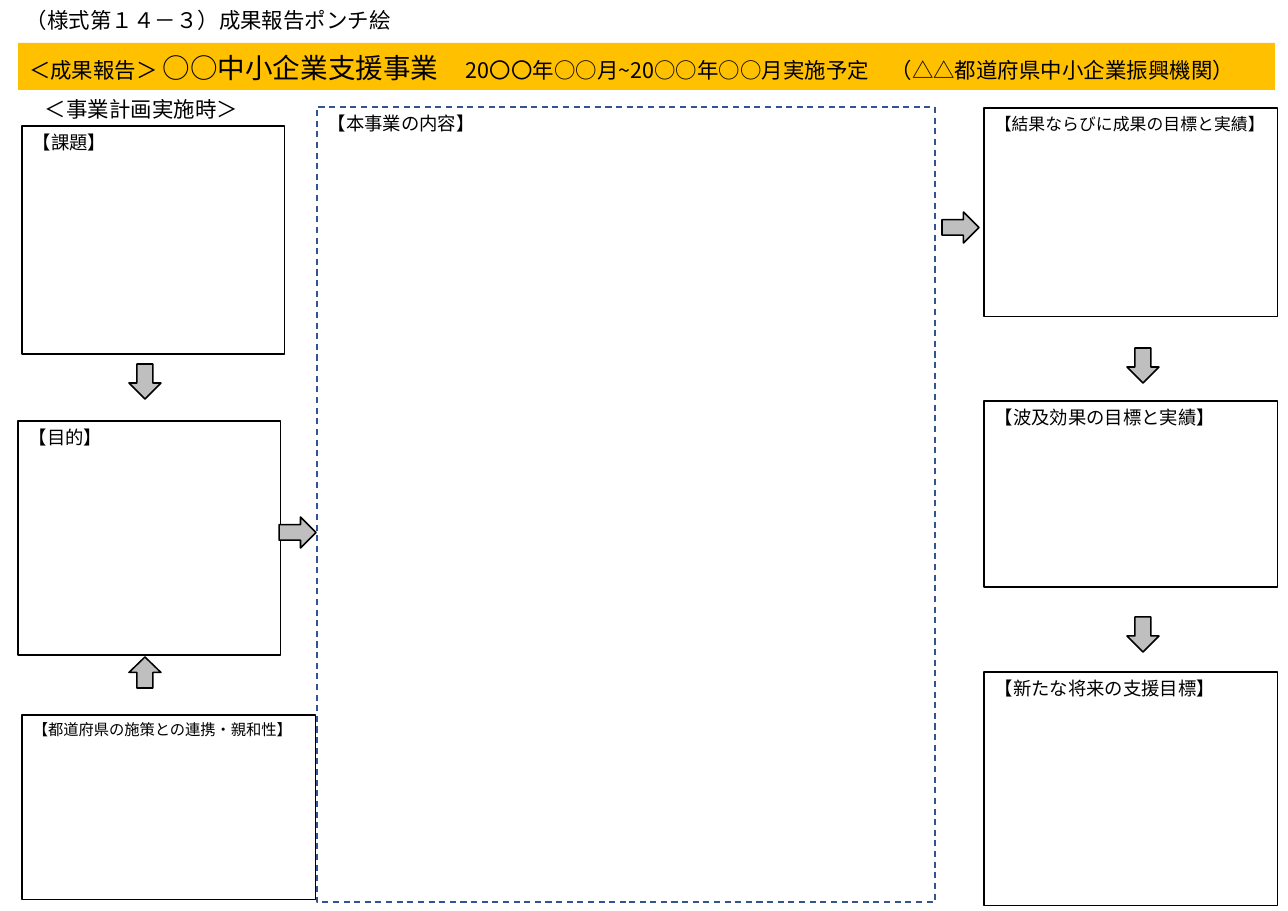
from lxml import etree
from pptx import Presentation
from pptx import util as u
from pptx.dml.color import RGBColor
from pptx.enum import dml, shapes, text
from pptx.oxml.ns import qn

PX = 914400 / 110.2
SLIDE = (1288, 911)
FONT = "Noto Sans CJK JP"
COLORS = {"ink": "000000", "banner": "FFC000", "arrow": "BFBFBF", "dash": "325491"}

BANNER_BOX = (18, 43, 1257, 47)
BANNER_RUNS = [
    ("＜成果報告＞ ", 14),
    ("○○中小企業支援事業　", 18),
    ("20〇〇年○○月~20○○年○○月実施予定　（△△都道府県中小企業振興機関）", 14),
]

# text, left, top, width, height
LABELS = [
    ("（様式第１４－３）成果報告ポンチ絵", 15, 2, 390, 37),
    ("＜事業計画実施時＞", 34, 91, 217, 37),
]

# text, size, left, top, width, height
PANELS = [
    ("【課題】", 12, 22, 126, 263, 228),
    ("【目的】", 12, 18, 421, 263, 234),
    ("【都道府県の施策との連携・親和性】", 10, 22, 715, 294, 185),
    ("【結果ならびに成果の目標と実績】", 11, 984, 108, 294, 209),
    ("【波及効果の目標と実績】", 12, 984, 401, 294, 186),
    ("【新たな将来の支援目標】", 12, 984, 672, 294, 234),
]
CONTENT_PANEL = ("【本事業の内容】", 12, 317, 107, 618, 795)

# direction, left, top, width, height
ARROWS = [
    ("DOWN", 129, 364, 32, 35),
    ("UP", 129, 657, 32, 31),
    ("RIGHT", 279, 517, 37, 31),
    ("RIGHT", 942, 212, 37, 31),
    ("DOWN", 1127, 348, 32, 35),
    ("DOWN", 1127, 617, 32, 35),
]


def emu(*lengths):
    return [u.Emu(round(n * PX)) for n in lengths]


def color(name):
    return RGBColor.from_string(COLORS[name])


def add_run(p, content, size):
    r = p.add_run()
    r.text = content
    r.font.size = u.Pt(size)
    r.font.color.rgb = color("ink")
    r.font.name = FONT
    etree.SubElement(r._r.get_or_add_rPr(), qn("a:ea"), typeface=FONT)


def add_shape(slide, kind, box, line, width, fill=None):
    sp = slide.shapes.add_shape(kind, *emu(*box))
    sp.shadow.inherit = False
    if fill:
        sp.fill.solid()
        sp.fill.fore_color.rgb = color(fill)
    else:
        sp.fill.background()
    sp.line.color.rgb = color(line)
    sp.line.width = u.Pt(width)
    return sp


def add_panel(slide, content, size, *box, line="ink", width=0.75):
    sp = add_shape(slide, shapes.MSO_SHAPE.RECTANGLE, box, line, width)
    tf = sp.text_frame
    tf.word_wrap = True
    tf.vertical_anchor = text.MSO_ANCHOR.TOP
    p = tf.paragraphs[0]
    p.alignment = text.PP_ALIGN.LEFT
    add_run(p, content, size)
    return sp


def add_banner(slide):
    title = slide.shapes.title
    title.left, title.top, title.width, title.height = emu(*BANNER_BOX)
    title.fill.solid()
    title.fill.fore_color.rgb = color("banner")
    tf = title.text_frame
    tf.word_wrap = True
    tf.auto_size = text.MSO_AUTO_SIZE.NONE
    tf.vertical_anchor = text.MSO_ANCHOR.BOTTOM
    p = tf.paragraphs[0]
    p.alignment = text.PP_ALIGN.LEFT
    p.line_spacing = 0.9
    for content, size in BANNER_RUNS:
        add_run(p, content, size)


def main():
    prs = Presentation()
    prs.slide_width, prs.slide_height = emu(*SLIDE)
    slide = prs.slides.add_slide(prs.slide_layouts[5])

    # Title banner and labels
    add_banner(slide)
    for content, *box in LABELS:
        tf = slide.shapes.add_textbox(*emu(*box)).text_frame
        tf.word_wrap = False
        add_run(tf.paragraphs[0], content, 14)

    # Panels
    for panel in PANELS:
        add_panel(slide, *panel)
    sp = add_panel(slide, *CONTENT_PANEL, line="dash", width=1)
    sp.line.dash_style = dml.MSO_LINE.DASH

    # Flow arrows
    for direction, *box in ARROWS:
        kind = shapes.MSO_SHAPE[direction + "_ARROW"]
        add_shape(slide, kind, box, "ink", 1, "arrow")

    prs.save("out.pptx")


if __name__ == "__main__":
    main()
